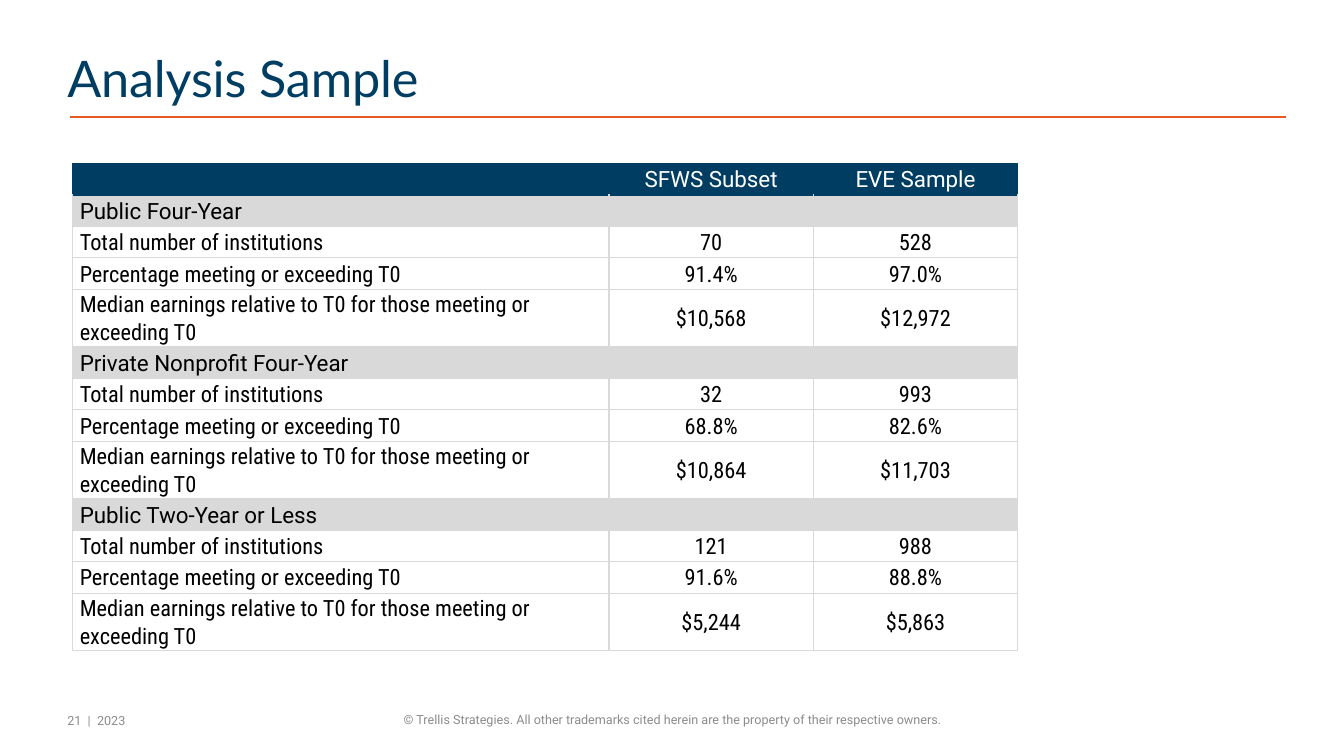
from lxml import etree
from pptx import Presentation
from pptx.dml.color import RGBColor
from pptx.enum import shapes, text
from pptx.oxml import parse_xml
from pptx.oxml.ns import qn
from pptx.util import Pt

NAVY = RGBColor(0x00, 0x3D, 0x63)
ORANGE = RGBColor(0xE7, 0x5A, 0x25)
SILVER = RGBColor(0xD9, 0xD9, 0xD9)
GRAY = RGBColor(0x8C, 0x8C, 0x8C)
WHITE = RGBColor(0xFF, 0xFF, 0xFF)
BLACK = RGBColor(0, 0, 0)

TITLE = "Analysis Sample"
NOTE = ("© Trellis Strategies. All other trademarks cited herein are the "
        "property of their respective owners.")
PAGE = "21  |  2023"
HEAD = ("", "SFWS Subset", "EVE Sample")
LABELS = (
    "Total number of institutions",
    "Percentage meeting or exceeding T0",
    "Median earnings relative to T0 for those meeting or exceeding T0",
)
GROUPS = {
    "Public Four-Year": (("70", "528"), ("91.4%", "97.0%"), ("$10,568", "$12,972")),
    "Private Nonprofit Four-Year": (("32", "993"), ("68.8%", "82.6%"), ("$10,864", "$11,703")),
    "Public Two-Year or Less": (("121", "988"), ("91.6%", "88.8%"), ("$5,244", "$5,863")),
}
WIDTHS = (383, 146, 146)
LOW, TALL = 22.5, 40

LEFT, CENTER = text.PP_ALIGN.LEFT, text.PP_ALIGN.CENTER
TOP, MIDDLE = text.MSO_ANCHOR.TOP, text.MSO_ANCHOR.MIDDLE


def style(para, face, size, color, align=LEFT):
    para.alignment = align
    for run in para.runs:
        run.font.name = face
        run.font.size = Pt(size)
        run.font.color.rgb = color


def add_text(slide, words, area, face, size, color, align=LEFT, anchor=TOP):
    frame = slide.shapes.add_textbox(*map(Pt, area)).text_frame
    frame.word_wrap = True
    frame.vertical_anchor = anchor
    frame.text = words
    style(frame.paragraphs[0], face, size, color, align)
    return frame


def add_edges(cell, colors):
    """Draw 1 pt borders; colors maps each side (L, R, T, B) to a colour."""
    props = cell._tc.get_or_add_tcPr()
    for side, color in colors.items():
        props.append(parse_xml(
            f'<a:ln{side} xmlns:a="http://schemas.openxmlformats.org/drawingml/2006/main" w="12700">'
            f'<a:solidFill><a:srgbClr val="{color}"/></a:solidFill></a:ln{side}>'))


def fill_cell(cell, words, face, ink, fill, align, edges):
    cell.margin_left = cell.margin_right = Pt(5)
    cell.margin_top = cell.margin_bottom = 0
    cell.vertical_anchor = MIDDLE
    add_edges(cell, edges)
    if fill is None:
        cell.fill.background()
    else:
        cell.fill.solid()
        cell.fill.fore_color.rgb = fill
    if words:
        cell.text_frame.text = words
        para = cell.text_frame.paragraphs[0]
        para.line_spacing = 1.07
        style(para, face, 16, ink, align)


def add_sample(slide):
    rows = [(HEAD, "Roboto", WHITE, NAVY, LOW)]
    for group, values in GROUPS.items():
        rows.append(((group, "", ""), "Roboto", BLACK, SILVER, LOW))
        for label, pair in zip(LABELS, values):
            high = TALL if label == LABELS[-1] else LOW
            rows.append(((label, *pair), "Roboto Condensed", BLACK, None, high))

    total = sum(row[-1] for row in rows)
    table = slide.shapes.add_table(
        len(rows), len(WIDTHS), Pt(52), Pt(116.75), Pt(sum(WIDTHS)), Pt(total)).table
    table.first_row = table.horz_banding = False
    for col, width in zip(table.columns, WIDTHS):
        col.width = Pt(width)
    for i, (words, face, ink, fill, high) in enumerate(rows):
        table.rows[i].height = Pt(high)
        edges = dict.fromkeys("LRTB", NAVY if i == 0 else SILVER)
        if i == 1:
            edges["T"] = NAVY
        for j, word in enumerate(words):
            fill_cell(table.cell(i, j), word, face, ink, fill,
                      CENTER if j else LEFT, edges)


def main():
    deck = Presentation()
    deck.slide_width, deck.slide_height = Pt(960), Pt(540)
    slide = deck.slides.add_slide(deck.slide_layouts[6])

    rule = slide.shapes.add_connector(
        shapes.MSO_CONNECTOR.STRAIGHT, Pt(49.7), Pt(83.5), Pt(918.7), Pt(83.5))
    rule.line.color.rgb = ORANGE
    rule.line.width = Pt(1)
    etree.SubElement(rule._element.spPr, qn("a:effectLst"))

    add_text(slide, NOTE, (141.8, 496.8, 676.8, 33.8), "Roboto", 9, GRAY, CENTER, MIDDLE)
    page = add_text(slide, PAGE, (41, 506.9, 180.7, 28.8), "Roboto", 9, GRAY)
    page.margin_top = Pt(2)
    title = add_text(slide, TITLE, (41, 35.3, 877.7, 62.6), "Lato", 36, NAVY)
    para = title.paragraphs[0]
    para.line_spacing = 0.9
    para.runs[0].font._element.set("spc", "-10")

    add_sample(slide)
    deck.save("out.pptx")


if __name__ == "__main__":
    main()
